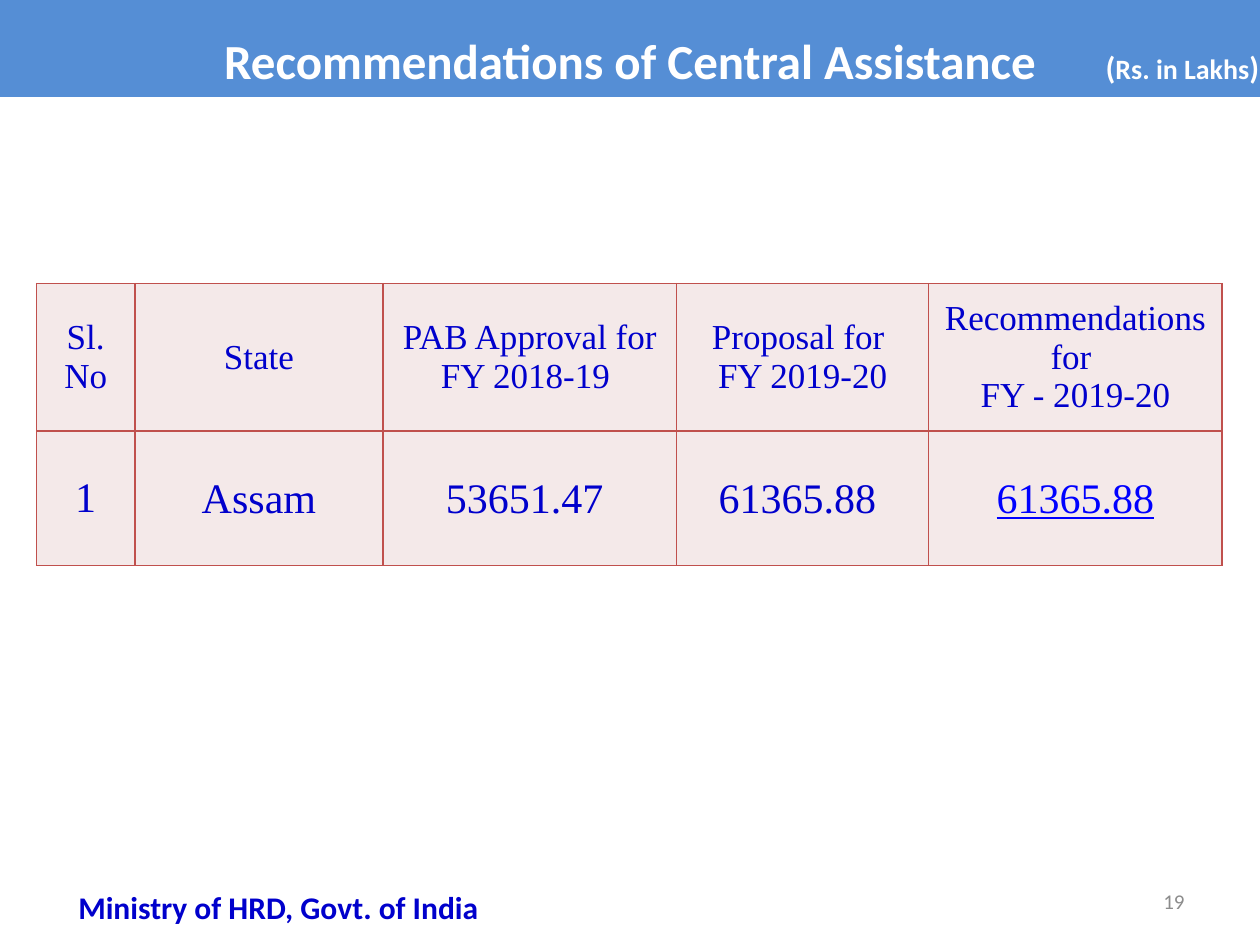
from lxml.etree import SubElement
from pptx import Presentation
from pptx.dml.color import RGBColor
from pptx.enum.shapes import MSO_SHAPE
from pptx.enum.text import MSO_ANCHOR, PP_ALIGN
from pptx.oxml.ns import qn
from pptx.util import Inches, Pt

WHITE = RGBColor(0xFF, 0xFF, 0xFF)
BANNER_BLUE = RGBColor(0x55, 0x8E, 0xD5)
INK_BLUE = RGBColor(0x00, 0x00, 0xCC)
LINK_BLUE = RGBColor(0x00, 0x00, 0xFF)
GREY = RGBColor(0x8C, 0x8C, 0x8C)
CELL_PINK = RGBColor(0xF4, 0xE9, 0xE9)
BORDER_RED = RGBColor(0xC0, 0x50, 0x4D)

deck = Presentation()
deck.slide_width, deck.slide_height = Inches(10), Inches(7.5)
COLUMN = deck.slide_width // 100
ROW = deck.slide_height // 75
slide = deck.slides.add_slide(deck.slide_layouts[6])


def style(paragraph, size, color, bold=False, face="Calibri", align=PP_ALIGN.CENTER):
    paragraph.alignment = align
    font = paragraph.font
    font.name, font.size, font.bold = face, Pt(size), bold
    font.color.rgb = color


def add_label(left, top, width, height, wrap=True):
    frame = slide.shapes.add_textbox(
        int(left * COLUMN), int(top * ROW), int(width * COLUMN), int(height * ROW)
    ).text_frame
    frame.word_wrap = wrap
    return frame


ministry = add_label(2.5, 70, 39.2, 4)
ministry.text = "Ministry of HRD, Govt. of India"
style(ministry.paragraphs[0], 18, INK_BLUE, bold=True)

headings = [
    "Sl. No",
    "State",
    "PAB Approval for FY 2018-19 ",
    "Proposal for \nFY 2019-20",
    "Recommendations for \nFY - 2019-20",
]
assam = ["1", "Assam", "53651.47 ", "61365.88 ", "61365.88"]
column_shares = [7.8, 19.7, 23.3, 20, 23.3]
row_shares = [11.7, 10.7]
text_sizes = [20, 24]

assistance = slide.shapes.add_table(
    len(row_shares), len(column_shares),
    int(2.9 * COLUMN), int(22.5 * ROW),
    int(sum(column_shares) * COLUMN), int(sum(row_shares) * ROW),
).table
assistance.first_row = assistance.horz_banding = False
for column, share in zip(assistance.columns, column_shares):
    column.width = int(share * COLUMN)
for row, share in zip(assistance.rows, row_shares):
    row.height = int(share * ROW)

for r, entries in enumerate([headings, assam]):
    for c, entry in enumerate(entries):
        cell = assistance.cell(r, c)
        cell.text = entry
        cell.vertical_anchor = MSO_ANCHOR.MIDDLE
        cell.margin_left = cell.margin_right = Inches(0.01 if r and c else 0.07)
        cell.margin_top = Inches(0.01 if r and c else 0)
        cell.margin_bottom = 0
        for paragraph in cell.text_frame.paragraphs:
            style(paragraph, text_sizes[r], INK_BLUE, face="Times New Roman")
        properties = cell._tc.get_or_add_tcPr()
        for side in ("lnL", "lnR", "lnT", "lnB"):
            border = SubElement(properties, qn(f"a:{side}"), w=str(Pt(1)))
            SubElement(SubElement(border, qn("a:solidFill")), qn("a:srgbClr"), val=str(BORDER_RED))
        cell.fill.solid()
        cell.fill.fore_color.rgb = CELL_PINK

recommended = assistance.cell(1, 4).text_frame.paragraphs[0].font
recommended.color.rgb = LINK_BLUE
recommended.underline = True

page_number = add_label(71.7, 69.5, 23.3, 4)
page_number.text = "19"
page_number.vertical_anchor = MSO_ANCHOR.MIDDLE
style(page_number.paragraphs[0], 12, GREY, align=PP_ALIGN.RIGHT)

banner = slide.shapes.add_shape(MSO_SHAPE.RECTANGLE, 0, 0, deck.slide_width, int(7.7 * ROW))
banner.shadow.inherit = False
banner.fill.solid()
banner.fill.fore_color.rgb = BANNER_BLUE
banner.line.fill.background()
title = banner.text_frame
title.text = "Recommendations of Central Assistance"
title.vertical_anchor = MSO_ANCHOR.MIDDLE
title.paragraphs[0].line_spacing = 1.4
style(title.paragraphs[0], 28, WHITE, bold=True)

currency = add_label(86.7, 3.3, 14.3, 4, wrap=False).paragraphs[0]
style(currency, 18, WHITE, bold=True)
for part, size in [("(", 18), ("Rs. in Lakhs", 16), (")", 18)]:
    run = currency.add_run()
    run.text = part
    run.font.size = Pt(size)

deck.save("out.pptx")
